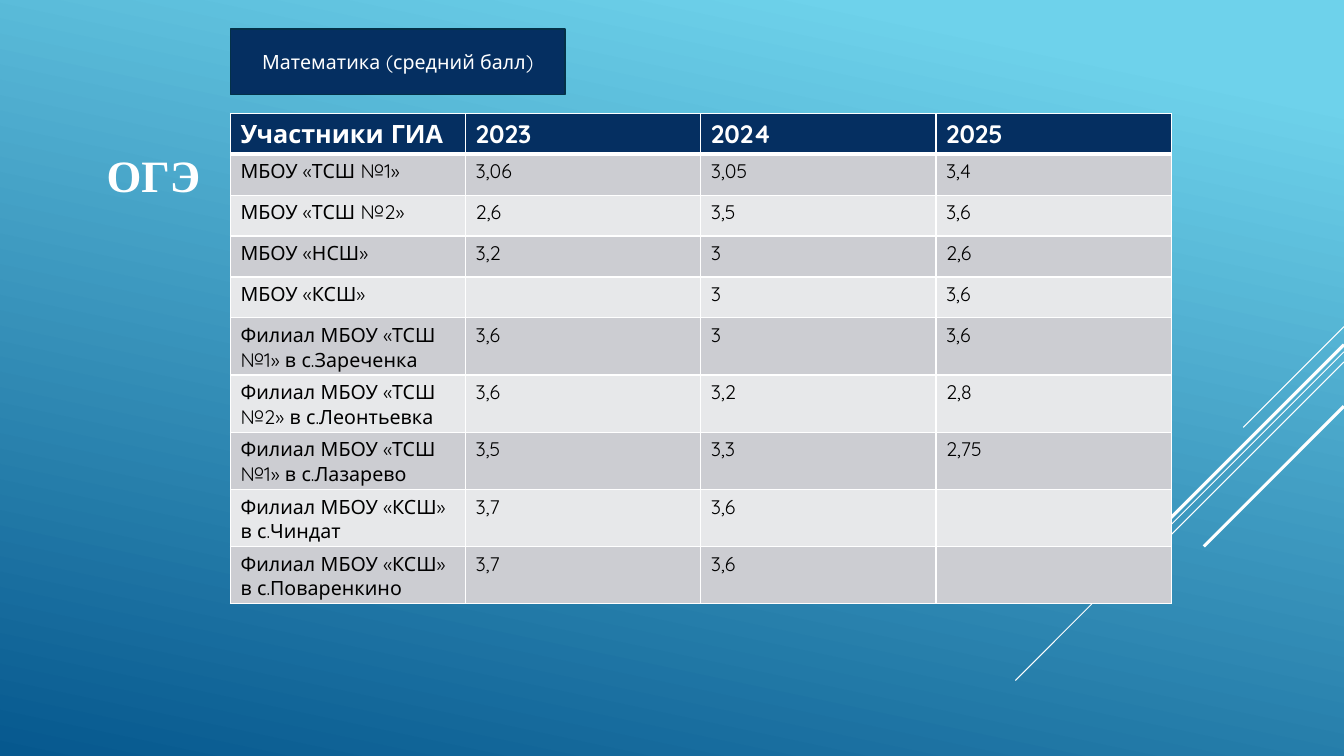
import pptx
import pptx.dml.color
import pptx.enum.shapes
import pptx.enum.text
import pptx.oxml
import pptx.oxml.ns
import pptx.util

Pt = pptx.util.Pt
ANCHOR = pptx.enum.text.MSO_ANCHOR
ALIGN = pptx.enum.text.PP_ALIGN
NAMESPACE = pptx.oxml.ns.nsdecls("a")

THEME = {
    "sky": "6ED2EB", "deep": "06588E", "navy": "052F61", "outline": "043148",
    "white": "FFFFFF", "bands": ["CCCDD2", "E7E8EA"],
    "title": {"name": "Times New Roman", "size": Pt(32), "bold": True, "color": "FFFFFF"},
    "header": {"name": "Quicksand", "size": Pt(18), "bold": True, "color": "FFFFFF"},
    "body": {"name": "Quicksand", "size": Pt(14), "bold": False, "color": "000000"},
    "label": {"name": "Quicksand", "size": Pt(14), "bold": False, "color": "FFFFFF"},
}


def rgb(value):
    return pptx.dml.color.RGBColor.from_string(value)


def write(text_frame, text, style):
    run = text_frame.paragraphs[0].add_run()
    run.text = text
    for attribute, value in style.items():
        if attribute == "color":
            run.font.color.rgb = rgb(value)
        else:
            setattr(run.font, attribute, value)


presentation = pptx.Presentation()
presentation.slide_width, presentation.slide_height = Pt(960), Pt(540)
slide = presentation.slides.add_slide(presentation.slide_layouts[6])

# Background gradient
background = slide.background.fill
background.gradient()
background.gradient_angle = 258
for stop, position, color in zip(background.gradient_stops, (0.1, 1), (THEME["sky"], THEME["deep"])):
    stop.position = position
    stop.color.rgb = rgb(color)

# Diagonal lines from the right edge: top, run, weight
for top, length, weight in [(233.3, 72, 0.75), (251.3, 234.7, 0.75), (258.5, 149.4, 0.75),
                            (246.2, 137.5, 2.25), (290.2, 100.1, 2.25)]:
    line = slide.shapes.add_connector(pptx.enum.shapes.MSO_CONNECTOR.STRAIGHT,
                                      Pt(960), Pt(top), Pt(960 - length), Pt(top + length))
    line.line.color.rgb = rgb(THEME["white"])
    line.line.width = Pt(weight)
    line._element.spPr.append(pptx.oxml.parse_xml(f"<a:effectLst {NAMESPACE}/>"))

# Title
title = slide.shapes.add_textbox(Pt(69.1), Pt(65.5), Pt(671.8), Pt(118.8))
title.text_frame.word_wrap = True
title.text_frame.vertical_anchor = ANCHOR.MIDDLE
write(title.text_frame, "ОГЭ", THEME["title"])

# Table of average scores
rows = [
    ["Участники ГИА", "2023", "2024", "2025"],
    ["МБОУ «ТСШ №1»", "3,06", "3,05", "3,4"],
    ["МБОУ «ТСШ №2»", "2,6", "3,5", "3,6"],
    ["МБОУ «НСШ»", "3,2", "3", "2,6"],
    ["МБОУ «КСШ»", "", "3", "3,6"],
    ["Филиал МБОУ «ТСШ №1» в с.Зареченка", "3,6", "3", "3,6"],
    ["Филиал МБОУ «ТСШ №2» в с.Леонтьевка", "3,6", "3,2", "2,8"],
    ["Филиал МБОУ «ТСШ №1» в с.Лазарево", "3,5", "3,3", "2,75"],
    ["Филиал МБОУ «КСШ» в с.Чиндат", "3,7", "3,6", ""],
    ["Филиал МБОУ «КСШ» в с.Поваренкино", "3,7", "3,6", ""],
]
table = slide.shapes.add_table(len(rows), 4, Pt(164.6), Pt(81), Pt(672), Pt(292)).table
for row_index, values in enumerate(rows):
    table.rows[row_index].height = Pt(29.2)
    is_header = row_index == 0
    for column_index, value in enumerate(values):
        cell = table.cell(row_index, column_index)
        # Borders come before the fill in the cell properties
        properties = cell._tc.get_or_add_tcPr()
        for side in "LRTB":
            thick = (is_header and side == "B") or (row_index == 1 and side == "T")
            border = pptx.oxml.parse_xml(
                f'<a:ln{side} {NAMESPACE} w="{Pt(3 if thick else 1)}"><a:solidFill>'
                f'<a:srgbClr val="{THEME["white"]}"/></a:solidFill></a:ln{side}>')
            properties.append(border)
        cell.fill.solid()
        cell.fill.fore_color.rgb = rgb(THEME["navy"] if is_header else THEME["bands"][(row_index - 1) % 2])
        if value:
            write(cell.text_frame, value, THEME["header" if is_header else "body"])

# Subject label
label = slide.shapes.add_shape(pptx.enum.shapes.MSO_SHAPE.RECTANGLE, Pt(164.6), Pt(20.6), Pt(239), Pt(47))
label.shadow.inherit = False
label.fill.solid()
label.fill.fore_color.rgb = rgb(THEME["navy"])
label.line.color.rgb = rgb(THEME["outline"])
label.line.width = Pt(1.25)
label.text_frame.word_wrap = True
label.text_frame.vertical_anchor = ANCHOR.MIDDLE
label.text_frame.paragraphs[0].alignment = ALIGN.CENTER
write(label.text_frame, "Математика (средний балл)", THEME["label"])

presentation.save("out.pptx")
